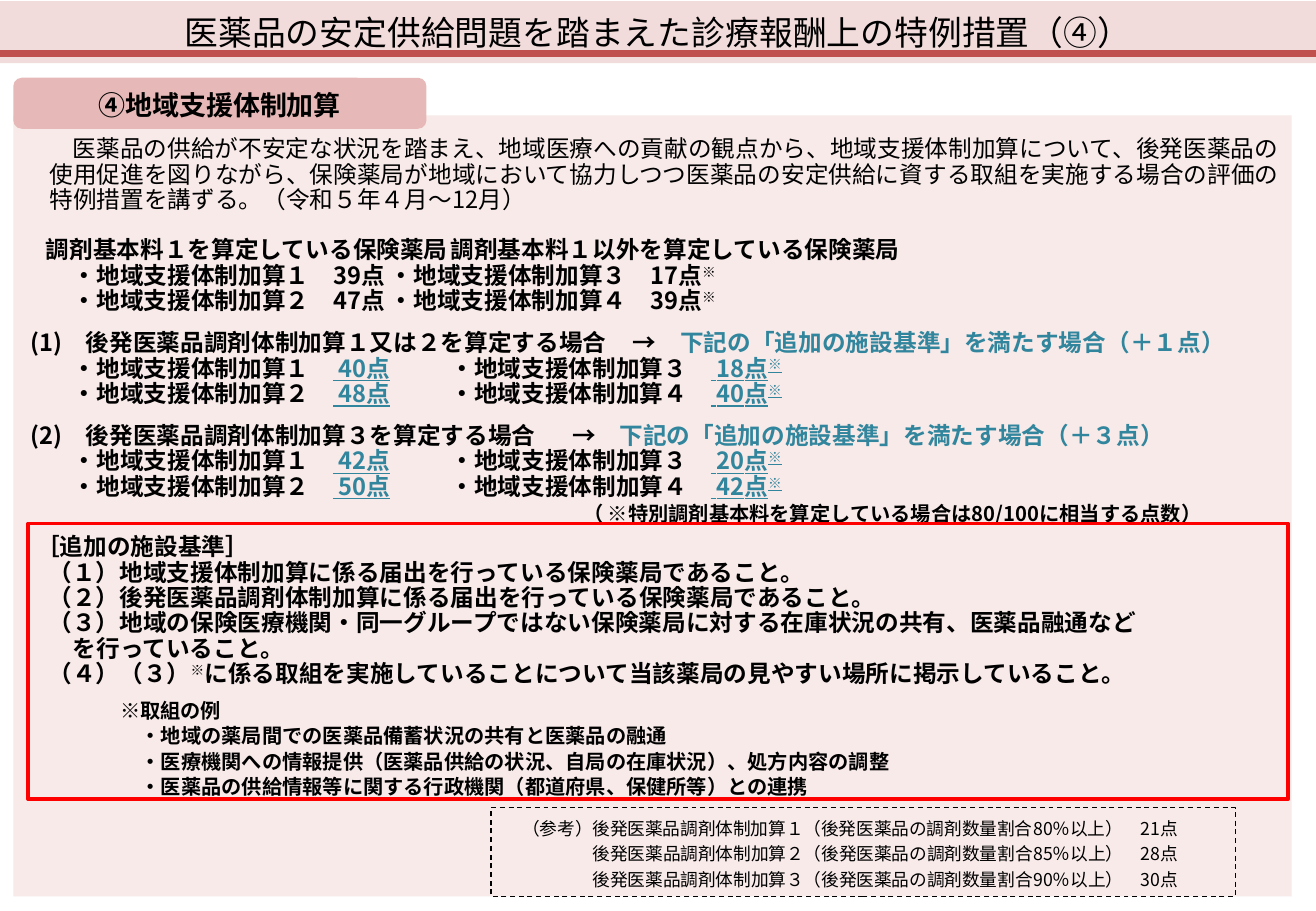
from lxml import etree
from pptx import Presentation
from pptx.dml.color import RGBColor
from pptx.enum.dml import MSO_LINE
from pptx.enum.shapes import MSO_CONNECTOR, MSO_SHAPE
from pptx.enum.text import MSO_ANCHOR, PP_ALIGN
from pptx.oxml.ns import qn
from pptx.util import Inches, Pt

RECT, ROUND = MSO_SHAPE.RECTANGLE, MSO_SHAPE.ROUNDED_RECTANGLE
TOP, MIDDLE = MSO_ANCHOR.TOP, MSO_ANCHOR.MIDDLE
LEFT, CENTER = PP_ALIGN.LEFT, PP_ALIGN.CENTER
DASH = MSO_LINE.DASH
STRAIGHT = MSO_CONNECTOR.STRAIGHT

FONT = "Noto Sans CJK JP"
COLORS = {"pale": "F2DCDB", "tag": "E6B9B8", "rule": "C0504D",
          "frame": "FF0000", "text": "000000", "raised": "31859C"}

TITLE = "医薬品の安定供給問題を踏まえた診療報酬上の特例措置（④）"
TAG = "④地域支援体制加算"
INTRO = ("医薬品の供給が不安定な状況を踏まえ、地域医療への貢献の観点から、"
         "地域支援体制加算について、後発医薬品の使用促進を図りながら、"
         "保険薬局が地域において協力しつつ医薬品の安定供給に資する取組を"
         "実施する場合の評価の特例措置を講ずる。（令和５年４月～12月）")
PHARMACY_TYPES = "調剤基本料１を算定している保険薬局\t調剤基本料１以外を算定している保険薬局"
BASE_POINTS = [("１", "39点", "３", "17点"), ("２", "47点", "４", "39点")]
CASES = [
    ("(1)　後発医薬品調剤体制加算１又は２を算定する場合",
     "下記の「追加の施設基準」を満たす場合（＋１点）",
     [("１", " 40点", "３", " 18点"), ("２", " 48点", "４", " 40点")]),
    ("(2)　後発医薬品調剤体制加算３を算定する場合",
     "下記の「追加の施設基準」を満たす場合（＋３点）",
     [("１", " 42点", "３", " 20点"), ("２", " 50点", "４", " 42点")]),
]
SPECIAL_NOTE = "（ ※特別調剤基本料を算定している場合は80/100に相当する点数）"
CRITERIA_HEADING = "［追加の施設基準］"
CRITERIA = [
    (0.19, "（１）地域支援体制加算に係る届出を行っている保険薬局であること。"),
    (0.19, "（２）後発医薬品調剤体制加算に係る届出を行っている保険薬局であること。"),
    (0.19, "（３）地域の保険医療機関・同一グループではない保険薬局に対する在庫状況の共有、医薬品融通など"),
    (0.39, "を行っていること。"),
    (0.19, [("（４）（３）", {}), ("※", {"raised": True}),
            ("に係る取組を実施していることについて当該薬局の見やすい場所に掲示していること。", {})]),
]
EXAMPLES_HEADING = "※取組の例"
EXAMPLES = [
    "・地域の薬局間での医薬品備蓄状況の共有と医薬品の融通",
    "・医療機関への情報提供（医薬品供給の状況、自局の在庫状況）、処方内容の調整",
    "・医薬品の供給情報等に関する行政機関（都道府県、保健所等）との連携",
]
REFERENCES = [
    (0.16, "（参考）後発医薬品調剤体制加算１（後発医薬品の調剤数量割合80％以上）　21点"),
    (0.74, "後発医薬品調剤体制加算２（後発医薬品の調剤数量割合85％以上）　28点"),
    (0.74, "後発医薬品調剤体制加算３（後発医薬品の調剤数量割合90％以上）　30点"),
]


def rgb(name):
    return RGBColor.from_string(COLORS[name])


def add_box(slide, kind, area, fill=None, alpha=None, line=None, width=0.75,
            dash=None, anchor=MIDDLE, inset_top=0.05):
    box = slide.shapes.add_shape(kind, *(Inches(v) for v in area))
    box.shadow.inherit = False
    if fill:
        box.fill.solid()
        box.fill.fore_color.rgb = rgb(fill)
        if alpha:
            color = box.fill._xPr.find(qn("a:solidFill"))[0]
            etree.SubElement(color, qn("a:alpha")).set("val", str(alpha * 1000))
    else:
        box.fill.background()
    if line:
        box.line.color.rgb = rgb(line)
        box.line.width = Pt(width)
        if dash:
            box.line.dash_style = dash
    else:
        box.line.fill.background()
    box.text_frame.word_wrap = True
    box.text_frame.vertical_anchor = anchor
    box.text_frame.margin_top = Inches(inset_top)
    return box


def write(box, text, size=14, bold=True, align=LEFT, spacing=15, before=0,
          margin=0, indent=0, tab=None):
    frame = box.text_frame
    paragraph = frame.paragraphs[0]
    if paragraph.runs:
        paragraph = frame.add_paragraph()
    paragraph.alignment = align
    if spacing:
        paragraph.line_spacing = Pt(spacing)
    paragraph.space_before = Pt(before)
    props = paragraph._p.get_or_add_pPr()
    props.set("marL", str(Inches(margin)))
    props.set("indent", str(Inches(indent)))
    if tab:
        stops = etree.SubElement(props, qn("a:tabLst"))
        stop = etree.SubElement(stops, qn("a:tab"))
        stop.set("pos", str(Inches(tab)))
        stop.set("algn", "l")
    pieces = [(text, {})] if isinstance(text, str) else text
    for words, style in pieces:
        run = paragraph.add_run()
        run.text = words
        run.font.size = Pt(size)
        run.font.bold = bold
        run.font.name = FONT
        run.font.color.rgb = rgb(style.get("color", "text"))
        if style.get("underline"):
            run.font.underline = True
        run_props = run._r.get_or_add_rPr()
        if style.get("raised"):
            run_props.set("baseline", "30000")
        etree.SubElement(run_props, qn("a:ea")).set("typeface", FONT)


def write_points(box, rows, style):
    for left, left_points, right, right_points in rows:
        write(box, [(f"・地域支援体制加算{left}　", {}), (left_points, style),
                    (f"\t・地域支援体制加算{right}　", {}), (right_points, style),
                    ("※", {**style, "raised": True})], indent=0.39, tab=4.39)


def main():
    prs = Presentation()
    prs.slide_width, prs.slide_height = Inches(10.83), Inches(7.5)
    slide = prs.slides.add_slide(prs.slide_layouts[6])

    panel = add_box(slide, RECT, (0.11, 0.95, 10.52, 6.43), fill="pale", alpha=60,
                    anchor=TOP, inset_top=0.18)
    write(panel, INTRO, bold=False, margin=0.2, indent=0.19)
    write(panel, PHARMACY_TYPES, before=15, indent=0.17, tab=4.2)
    write_points(panel, BASE_POINTS, {})
    for case, condition, rows in CASES:
        write(panel, [(f"{case}\t→　", {}), (condition, {"color": "raised"})],
              before=10, indent=0.04, tab=5.02)
        write_points(panel, rows, {"color": "raised", "underline": True})
    write(panel, SPECIAL_NOTE, size=12, indent=4.59)
    write(panel, CRITERIA_HEADING, before=6, indent=0.09)
    for indent, criterion in CRITERIA:
        write(panel, criterion, indent=indent)
    write(panel, EXAMPLES_HEADING, size=12, before=6, indent=0.78)
    for example in EXAMPLES:
        write(panel, example, size=12, indent=0.95)

    tag = add_box(slide, ROUND, (0.11, 0.64, 3.4, 0.42), fill="tag", inset_top=0.08)
    write(tag, TAG, size=16, align=CENTER, spacing=None)

    reference_box = add_box(slide, RECT, (4.04, 6.65, 6.13, 0.73), line="text",
                            dash=DASH, anchor=TOP)
    for indent, reference in REFERENCES:
        write(reference_box, reference, size=10.5, bold=False, indent=indent)

    add_box(slide, RECT, (0.23, 4.31, 10.37, 2.27), line="frame", width=2)

    header = add_box(slide, RECT, (0, 0.01, 10.83, 0.51), fill="pale")
    write(header, TITLE, size=20, bold=False, align=CENTER, spacing=None)

    rule = slide.shapes.add_connector(STRAIGHT, 0, Inches(0.44), Inches(10.83), Inches(0.44))
    rule.line.color.rgb = rgb("rule")
    rule.line.width = Pt(4.5)
    etree.SubElement(rule._element.spPr, qn("a:effectLst"))

    prs.save("out.pptx")


if __name__ == "__main__":
    main()
